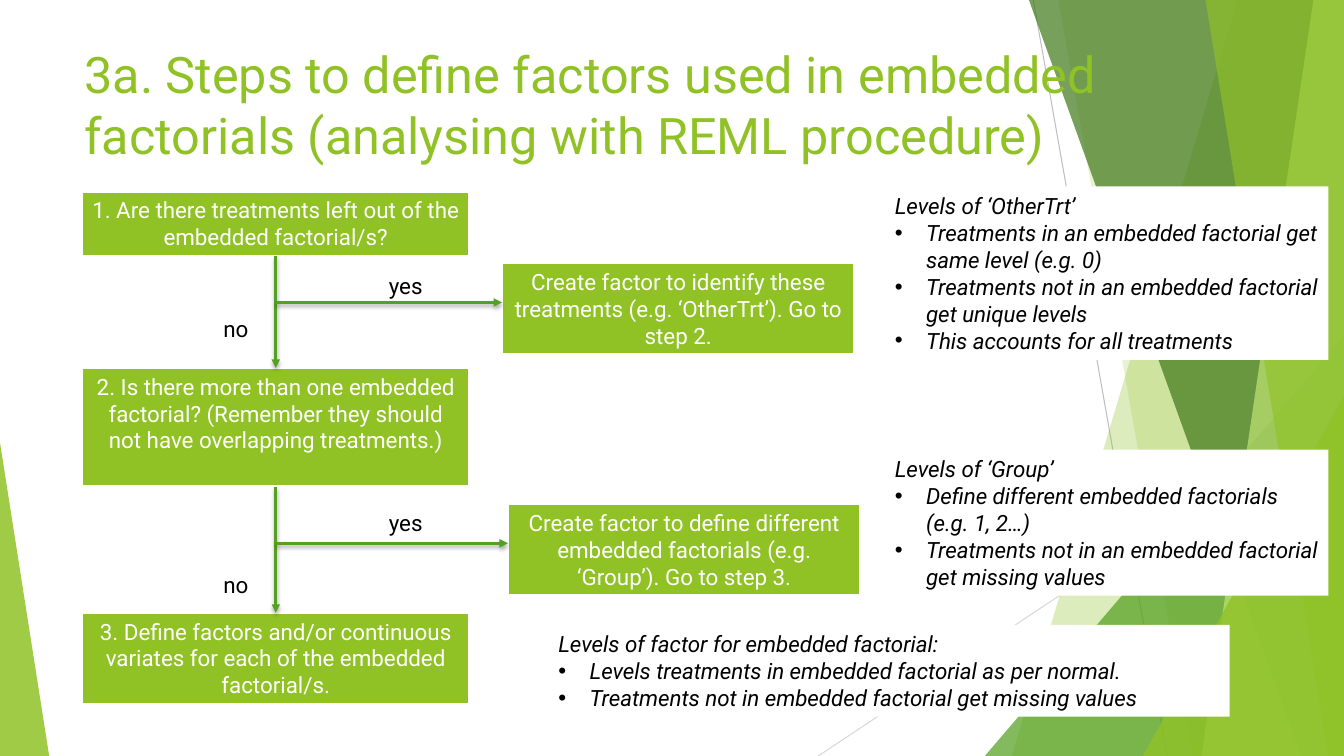
import pptx
import pptx.dml.color
import pptx.enum.shapes
import pptx.enum.text
import pptx.oxml
import pptx.oxml.ns
import pptx.util

Cm = pptx.util.Cm
Pt = pptx.util.Pt
SHAPES = pptx.enum.shapes.MSO_SHAPE
ANCHOR = pptx.enum.text.MSO_ANCHOR
ALIGN = pptx.enum.text.PP_ALIGN

FONT = "Roboto"
WIDTH, HEIGHT = 33.87, 19.05
COLOURS = {
    "lime": "90C226",
    "green": "54A021",
    "forest": "3F7819",
    "pale": "C0E474",
    "white": "FFFFFF",
    "black": "000000",
    "grey": "BFBFBF",
    "light_grey": "D9D9D9",
}

# Flowchart columns and rows, in cm
STEP_LEFT, STEP_WIDTH = 2.06, 9.78
TRUNK = STEP_LEFT + STEP_WIDTH / 2
STEPS = [  # top, height, text
    (4.83, 1.63, "1. Are there treatments left out of the embedded factorial/s?"),
    (9.27, 3.0, "2. Is there more than one embedded factorial? "
                "(Remember they should not have overlapping treatments.)"),
    (15.44, 2.31, "3. Define factors and/or continuous variates for each of the embedded factorial/s."),
]
BRANCHES = [  # arrow height, box left, box top, top of yes, top of no, text
    (7.62, 12.65, 6.63, 6.73, 7.82,
     "Create factor to identify these treatments (e.g. ‘OtherTrt’). Go to step 2."),
    (13.69, 12.8, 12.7, 12.7, 14.27,
     "Create factor to define different embedded factorials (e.g. ‘Group’). Go to step 3."),
]
NOTES = [  # left, top, width, height, heading, bullets
    (22.3, 4.7, 11.18, 4.37, "Levels of ‘OtherTrt’",
     ["Treatments in an embedded factorial get same level (e.g. 0)",
      "Treatments not in an embedded factorial get unique levels",
      "This accounts for all treatments"]),
    (22.3, 11.33, 11.18, 3.68, "Levels of ‘Group’",
     ["Define different embedded factorials (e.g. 1, 2…)",
      "Treatments not in an embedded factorial get missing values"]),
    (13.82, 15.75, 17.17, 2.31, "Levels of factor for embedded factorial:",
     ["Levels treatments in embedded factorial as per normal.",
      "Treatments not in embedded factorial get missing values"]),
]


def colour(name):
    return pptx.dml.color.RGBColor.from_string(COLOURS[name])


def add_xml(parent, tag, content="", attributes=""):
    namespace = pptx.oxml.ns.nsdecls("a")
    element = pptx.oxml.parse_xml(f"<a:{tag} {namespace} {attributes}>{content}</a:{tag}>")
    parent.append(element)


def paint(shape, fill, opacity=100):
    shape.shadow.inherit = False
    shape.line.fill.background()
    shape.fill.solid()
    shape.fill.fore_color.rgb = colour(fill)
    if opacity < 100:
        srgb = shape.fill._xPr.find(".//" + pptx.oxml.ns.qn("a:srgbClr"))
        add_xml(srgb, "alpha", attributes=f'val="{opacity * 1000}"')


def add_band(slide, top_x, bottom_x, fill, opacity):
    """Full-height band from a slanted left edge to the slide's right edge."""
    builder = slide.shapes.build_freeform(Cm(top_x), 0)
    corners = [(WIDTH, 0), (WIDTH, HEIGHT), (bottom_x, HEIGHT)]
    builder.add_line_segments([(Cm(x), Cm(y)) for x, y in corners])
    paint(builder.convert_to_shape(), fill, opacity)


def add_corner(slide, left, top, width, apex, fill, opacity):
    """Right-angled triangle standing on the slide's bottom edge."""
    shape = slide.shapes.add_shape(
        SHAPES.ISOSCELES_TRIANGLE, Cm(left), Cm(top), Cm(width), Cm(HEIGHT - top))
    shape.adjustments[0] = apex
    paint(shape, fill, opacity)


def add_line(slide, start, end, line_colour, width, arrow=False):
    connector = slide.shapes.add_connector(
        pptx.enum.shapes.MSO_CONNECTOR.STRAIGHT, *(Cm(value) for value in start + end))
    connector.line.color.rgb = colour(line_colour)
    connector.line.width = Pt(width)
    shadow = ""
    if arrow:
        add_xml(connector.line._get_or_add_ln(), "tailEnd", attributes='type="triangle"')
        shadow = (f'<a:outerShdw blurRad="{Pt(3)}" dist="{Pt(2)}" dir="5400000" rotWithShape="0">'
                  f'<a:srgbClr val="{COLOURS["black"]}"><a:alpha val="35000"/></a:srgbClr>'
                  '</a:outerShdw>')
    add_xml(connector._element.spPr, "effectLst", shadow)


def add_run(paragraph, text, text_colour, size=16, italic=False):
    run = paragraph.add_run()
    run.text = text
    run.font.name = FONT
    run.font.size = Pt(size)
    run.font.italic = italic
    run.font.color.rgb = colour(text_colour)


def add_label(slide, left, top, width, height, text, text_colour="black", size=16, wrap=False):
    frame = slide.shapes.add_textbox(Cm(left), Cm(top), Cm(width), Cm(height)).text_frame
    frame.word_wrap = wrap
    add_run(frame.paragraphs[0], text, text_colour, size)


def add_panel(slide, left, top, width, height, fill, anchor=ANCHOR.MIDDLE):
    shape = slide.shapes.add_shape(SHAPES.RECTANGLE, Cm(left), Cm(top), Cm(width), Cm(height))
    paint(shape, fill)
    shape.text_frame.word_wrap = True
    shape.text_frame.vertical_anchor = anchor
    return shape


def add_step(slide, left, top, width, height, text):
    shape = add_panel(slide, left, top, width, height, "lime", ANCHOR.TOP)
    shape.line.color.rgb = colour("white")
    shape.line.width = Pt(2)
    paragraph = shape.text_frame.paragraphs[0]
    paragraph.alignment = ALIGN.CENTER
    add_run(paragraph, text, "white")


def add_note(slide, left, top, width, height, heading, bullets):
    frame = add_panel(slide, left, top, width, height, "white").text_frame
    add_run(frame.paragraphs[0], heading, "black", italic=True)
    for text in bullets:
        paragraph = frame.add_paragraph()
        properties = paragraph._p.get_or_add_pPr()
        properties.set("marL", str(Cm(0.79)))
        properties.set("indent", str(-Cm(0.79)))
        add_xml(properties, "buFont", attributes='typeface="Arial"')
        add_xml(properties, "buChar", attributes='char="•"')
        add_run(paragraph, text, "black", italic=True)
    for paragraph in frame.paragraphs:
        paragraph.alignment = ALIGN.LEFT


def add_background(slide):
    add_line(slide, (26.04, 0), (29.41, HEIGHT), "grey", 0.75)
    add_line(slide, (WIDTH, 10.24), (20.62, HEIGHT), "light_grey", 0.75)
    add_band(slide, 31.19, 25.5, "lime", 30)
    add_band(slide, 26.67, 30.05, "lime", 20)
    add_corner(slide, 24.82, 8.46, WIDTH - 24.82, 1, "green", 72)
    add_band(slide, 25.93, 32.79, "forest", 70)
    add_band(slide, 33.1, 30.28, "pale", 70)
    add_band(slide, 30.38, 33.48, "lime", 65)
    add_corner(slide, 28.8, 9.98, WIDTH - 28.8, 1, "lime", 80)
    add_corner(slide, 0, 11.15, 1.24, 0, "lime", 85)


def main():
    presentation = pptx.Presentation()
    presentation.slide_width, presentation.slide_height = Cm(WIDTH), Cm(HEIGHT)
    slide = presentation.slides.add_slide(presentation.slide_layouts[6])
    add_background(slide)

    # Title
    add_label(slide, 1.88, 0.97, 29.11, 3.66,
              "3a. Steps to define factors used in embedded factorials "
              "(analysing with REML procedure)", "lime", 36, wrap=True)

    # Steps and the arrows that join them
    for top, height, text in STEPS:
        add_step(slide, STEP_LEFT, top, STEP_WIDTH, height, text)
    for (top, height, _), (next_top, _, _) in zip(STEPS, STEPS[1:]):
        add_line(slide, (TRUNK, top + height), (TRUNK, next_top), "green", 2, arrow=True)

    # Yes and no branches
    for arrow_y, left, top, yes_top, no_top, text in BRANCHES:
        add_step(slide, left, top, 8.89, 2.31, text)
        add_line(slide, (TRUNK, arrow_y), (left, arrow_y), "green", 2, arrow=True)
        add_label(slide, 9.55, yes_top, 1.63, 0.94, "yes")
        add_label(slide, 5.38, no_top, 1.37, 0.94, "no")

    # Notes on factor levels
    for note in NOTES:
        add_note(slide, *note)

    presentation.save("out.pptx")


if __name__ == "__main__":
    main()
